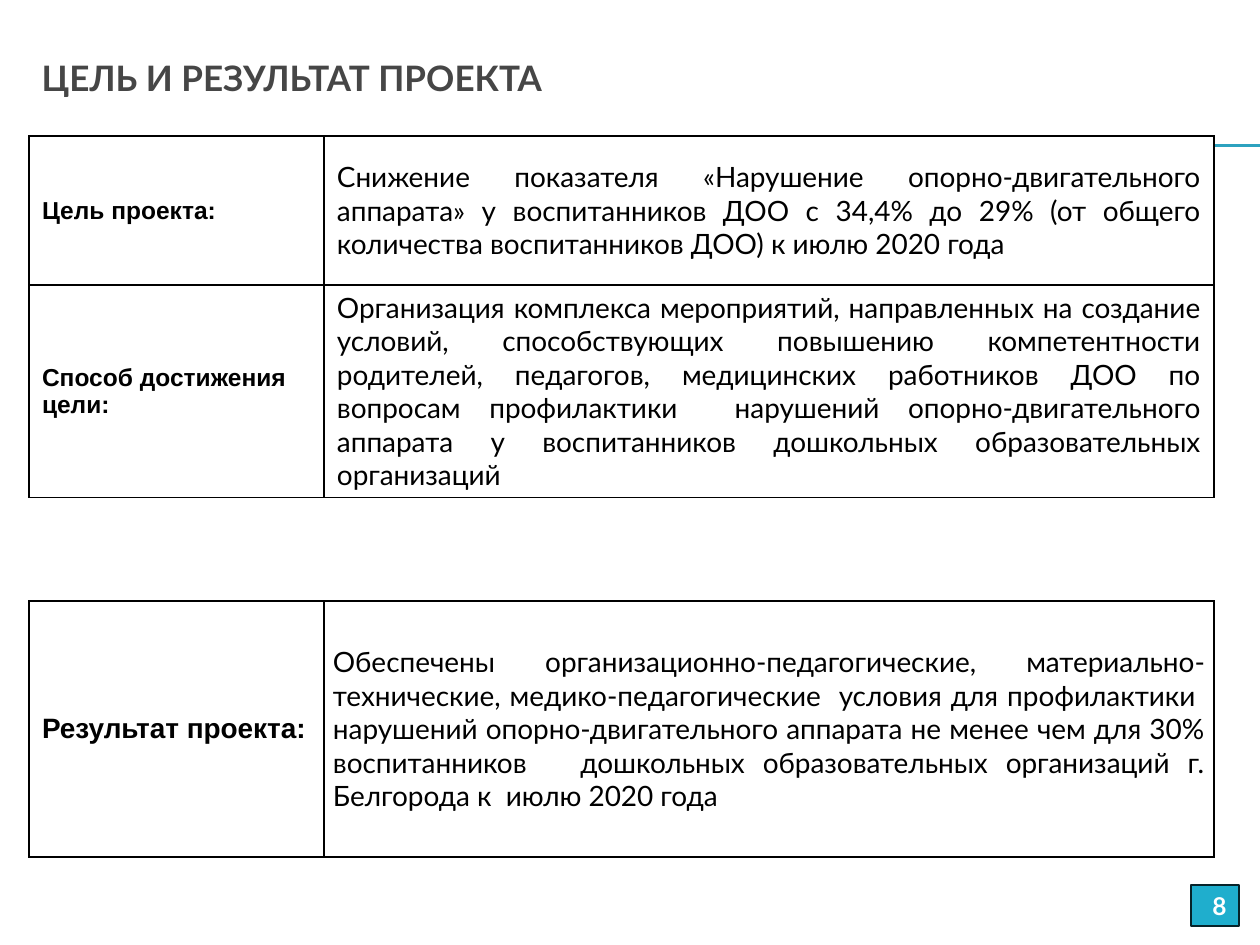
"""Build the slide on the goal and the result of the project."""
from lxml.etree import SubElement as Sub
from pptx import Presentation
from pptx.dml.color import RGBColor
from pptx.enum.shapes import MSO_CONNECTOR as Link, MSO_SHAPE as Shape
from pptx.enum.text import MSO_ANCHOR as Anchor, PP_ALIGN as Align
from pptx.oxml.ns import qn
from pptx.util import Pt

PX = 914400 / 126
LEFT, COLS = 29, (295, 890)
GOAL = "Снижение показателя «Нарушение опорно-двигательного аппарата» у воспитанников ДОО с 34,4% до 29% (от общего количества воспитанников ДОО) к июлю 2020 года"
WAY = "Организация комплекса мероприятий, направленных на создание условий, способствующих повышению компетентности родителей, педагогов, медицинских работников ДОО по вопросам профилактики  нарушений опорно-двигательного аппарата у воспитанников дошкольных образовательных организаций"
RESULT = "Обеспечены организационно-педагогические, материально-технические, медико-педагогические  условия для профилактики  нарушений опорно-двигательного аппарата не менее чем для 30% воспитанников   дошкольных образовательных организаций г. Белгорода к  июлю 2020 года"


def px(*vals):
    return [round(val * PX) for val in vals]


def style(frame, text, font, size, color, bold, align):
    frame.text = text
    para = frame.paragraphs[0]
    para.alignment = align
    face = para.runs[0].font
    face.name, face.size, face.bold = font, Pt(size), bold
    face.color.rgb = RGBColor.from_string(color)


deck = Presentation()
deck.slide_width, deck.slide_height = px(1260, 945)
slide = deck.slides.add_slide(deck.slide_layouts[5])
shapes = slide.shapes

for y in (145, 146):
    rule = shapes.add_connector(Link.STRAIGHT, *px(71, y, 1260, y))
    rule.line.color.rgb = RGBColor.from_string("2DA2BF")
    rule.line.width = Pt(0.75)
    Sub(rule.element.spPr, qn("a:effectLst"))

title = shapes.title
title.left, title.top, title.width, title.height = px(LEFT, 20, 1197, 116)
title.text_frame.vertical_anchor = Anchor.MIDDLE
style(title.text_frame, "ЦЕЛЬ И РЕЗУЛЬТАТ ПРОЕКТА", "Lato", 20, "464646", True, Align.LEFT)

tables = [
    (136, 14, (13, 6), [("Цель проекта:", GOAL, 149), ("Способ достижения цели:", WAY, 204)]),
    (601, 16, (9, 0), [("Результат проекта:", RESULT, 256)]),
]
for top, size, inset, rows in tables:
    high = sum(row[2] for row in rows)
    grid = shapes.add_table(len(rows), 2, *px(LEFT, top, sum(COLS), high)).table
    for col, wide in zip(grid.columns, COLS):
        col.width = px(wide)[0]
    for line, (label, text, tall) in zip(grid.rows, rows):
        line.height = px(tall)[0]
        head, body = line.cells
        style(head.text_frame, label, "Arial", size, "000000", True, Align.LEFT)
        style(body.text_frame, text, "Lato", 16, "000000", False, Align.JUSTIFY)
        for cell, (side, edge) in ((head, (13, 6)), (body, inset)):
            cell.vertical_anchor = Anchor.MIDDLE
            cell.margin_left, cell.margin_right = px(side, side)
            cell.margin_top, cell.margin_bottom = px(edge, edge)
            props = cell._tc.get_or_add_tcPr()
            for tag in ("a:lnL", "a:lnR", "a:lnT", "a:lnB"):
                fill = Sub(Sub(props, qn(tag), w=str(Pt(1))), qn("a:solidFill"))
                Sub(fill, qn("a:srgbClr"), val="000000")
            cell.fill.solid()
            cell.fill.fore_color.rgb = RGBColor.from_string("FFFFFF")

badge = shapes.add_shape(Shape.RECTANGLE, *px(1191, 885, 48, 41))
badge.shadow.inherit = False
badge.fill.solid()
badge.fill.fore_color.rgb = RGBColor.from_string("1FAECD")
badge.line.color.rgb = RGBColor.from_string("062329")
badge.line.width = Pt(0.75)
badge.text_frame.vertical_anchor = Anchor.MIDDLE
style(badge.text_frame, "8", "Lato", 14, "FFFFFF", True, Align.RIGHT)

deck.save("out.pptx")
